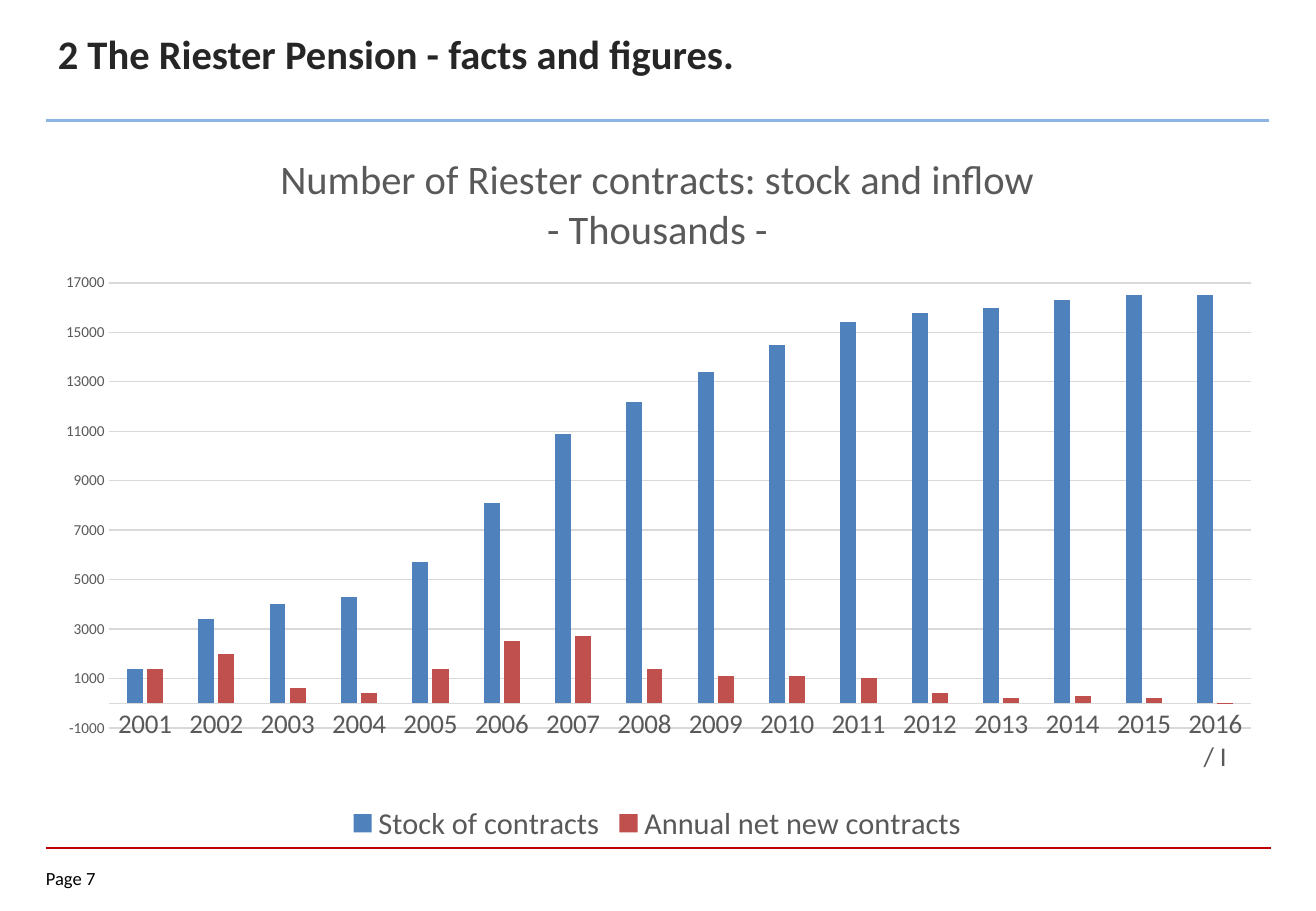
import lxml.etree
import pptx
import pptx.chart.data
import pptx.dml.color
import pptx.enum.chart
import pptx.enum.shapes
import pptx.oxml
import pptx.oxml.ns
import pptx.util

Cm = pptx.util.Cm
Pt = pptx.util.Pt
RGBColor = pptx.dml.color.RGBColor

BLACK = RGBColor(0x00, 0x00, 0x00)
HEADING = RGBColor(0x26, 0x26, 0x26)
LABEL_GREY = RGBColor(0x59, 0x59, 0x59)
GRID_GREY = RGBColor(0xD9, 0xD9, 0xD9)
HEADER_BLUE = RGBColor(0x8E, 0xB4, 0xE3)
FOOTER_RED = RGBColor(0xC0, 0x00, 0x00)
STOCK_BLUE = RGBColor(0x4F, 0x81, 0xBD)
INFLOW_RED = RGBColor(0xC0, 0x50, 0x4D)

YEARS = [str(year) for year in range(2001, 2016)] + ["2016 / I"]
CONTRACTS = [
    ("Stock of contracts", STOCK_BLUE,
     [1400, 3400, 4000, 4300, 5700, 8100, 10900, 12200,
      13400, 14500, 15400, 15800, 16000, 16300, 16500, 16500]),
    ("Annual net new contracts", INFLOW_RED,
     [1400, 2000, 600, 400, 1400, 2500, 2700, 1400,
      1100, 1100, 1000, 400, 200, 300, 200, -30]),
]
CHART_TITLE = ["Number of Riester contracts: stock and inflow", "- Thousands -"]
PLOT_AREA = {"x": 0.056, "y": 0.213, "w": 0.925, "h": 0.62}


def apply_format(target, values):
    for name, value in values.items():
        setattr(target, name, value)


def style_font(font, size, color, bold=False):
    apply_format(font, {"name": "Calibri", "size": Pt(size), "bold": bold})
    font.color.rgb = color


def add_rule(slide, left, top, width, color, weight):
    rule = slide.shapes.add_connector(
        pptx.enum.shapes.MSO_CONNECTOR.STRAIGHT, left, top, left + width, top)
    rule.line.color.rgb = color
    rule.line.width = Pt(weight)
    lxml.etree.SubElement(rule.element.spPr, pptx.oxml.ns.qn("a:effectLst"))


def add_label(slide, box, wording, size, color, bold=False, margins=None):
    label = slide.shapes.add_textbox(*box).text_frame
    apply_format(label, {"word_wrap": True, **(margins or {})})
    label.text = wording
    style_font(label.paragraphs[0].runs[0].font, size, color, bold)


def add_header(slide, left, top, width, height):
    add_label(slide, (left, top, Cm(19.2), Cm(1.8)),
              "2 The Riester Pension - facts and figures.", 24, HEADING, True)
    add_rule(slide, left, top + height, width, HEADER_BLUE, 1.5)


def add_footer(slide, left, top, width, height):
    add_rule(slide, left, top, width, FOOTER_RED, 1)
    sides = ("left", "top", "right", "bottom")
    add_label(slide, (left, top + Cm(0.41), Cm(1.85), height - Cm(0.41)),
              "Page 7", 11, BLACK,
              margins={f"margin_{side}": 0 for side in sides})


def fix_plot_area(chart):
    plot_area = chart.element.find(".//" + pptx.oxml.ns.qn("c:plotArea"))
    for layout in plot_area.findall(pptx.oxml.ns.qn("c:layout")):
        plot_area.remove(layout)
    edges = "".join(f'<c:{edge}Mode val="edge"/>' for edge in "xy")
    sizes = "".join(f'<c:{key} val="{share}"/>' for key, share in PLOT_AREA.items())
    plot_area.insert(0, pptx.oxml.parse_xml(
        f'<c:layout {pptx.oxml.ns.nsdecls("c")}><c:manualLayout>'
        f'<c:layoutTarget val="inner"/>{edges}{sizes}'
        '</c:manualLayout></c:layout>'))


def style_axes(chart):
    no_tick = pptx.enum.chart.XL_TICK_MARK.NONE
    ticks = {"major_tick_mark": no_tick, "minor_tick_mark": no_tick}
    years, thousands = chart.category_axis, chart.value_axis
    apply_format(years, ticks)
    apply_format(thousands, {**ticks, "minimum_scale": -1000, "maximum_scale": 17000,
                             "major_unit": 2000, "has_major_gridlines": True})
    for line in (years.format.line, thousands.major_gridlines.format.line):
        line.color.rgb = GRID_GREY
        line.width = Pt(0.75)
    thousands.format.line.fill.background()
    style_font(years.tick_labels.font, 16, LABEL_GREY)
    style_font(thousands.tick_labels.font, 9, LABEL_GREY)
    apply_format(thousands.tick_labels,
                 {"number_format": "General", "number_format_is_linked": False})


def add_contracts_chart(slide, left, top, width, height):
    figures = pptx.chart.data.CategoryChartData()
    figures.categories = YEARS
    for name, _, values in CONTRACTS:
        figures.add_series(name, values)
    chart = slide.shapes.add_chart(
        pptx.enum.chart.XL_CHART_TYPE.COLUMN_CLUSTERED,
        left, top, width, height, figures).chart
    style_font(chart.font, 10, BLACK)

    apply_format(chart, {"has_title": True, "has_legend": True})
    heading = chart.chart_title.text_frame
    heading.text = "\n".join(CHART_TITLE)
    for paragraph in heading.paragraphs:
        style_font(paragraph.runs[0].font, 24, LABEL_GREY)
    apply_format(chart.legend, {
        "position": pptx.enum.chart.XL_LEGEND_POSITION.BOTTOM,
        "include_in_layout": False})
    style_font(chart.legend.font, 18, LABEL_GREY)

    columns = chart.plots[0]
    apply_format(columns, {"gap_width": 219, "overlap": -27, "vary_by_categories": False})
    for series, (_, color, _) in zip(columns.series, CONTRACTS):
        series.invert_if_negative = False
        series.format.fill.solid()
        series.format.fill.fore_color.rgb = color
    style_axes(chart)
    fix_plot_area(chart)


def main():
    deck = pptx.Presentation()
    apply_format(deck, {"slide_width": Cm(27.51), "slide_height": Cm(19.05)})
    slide = deck.slides.add_slide(deck.slide_layouts[6])
    add_footer(slide, Cm(0.96), Cm(17.73), Cm(25.6), Cm(0.97))
    add_header(slide, Cm(0.96), Cm(0.48), Cm(25.56), Cm(2.04))
    add_contracts_chart(slide, Cm(0.84), Cm(2.72), Cm(25.8), Cm(15.01))
    deck.save("out.pptx")


if __name__ == "__main__":
    main()
